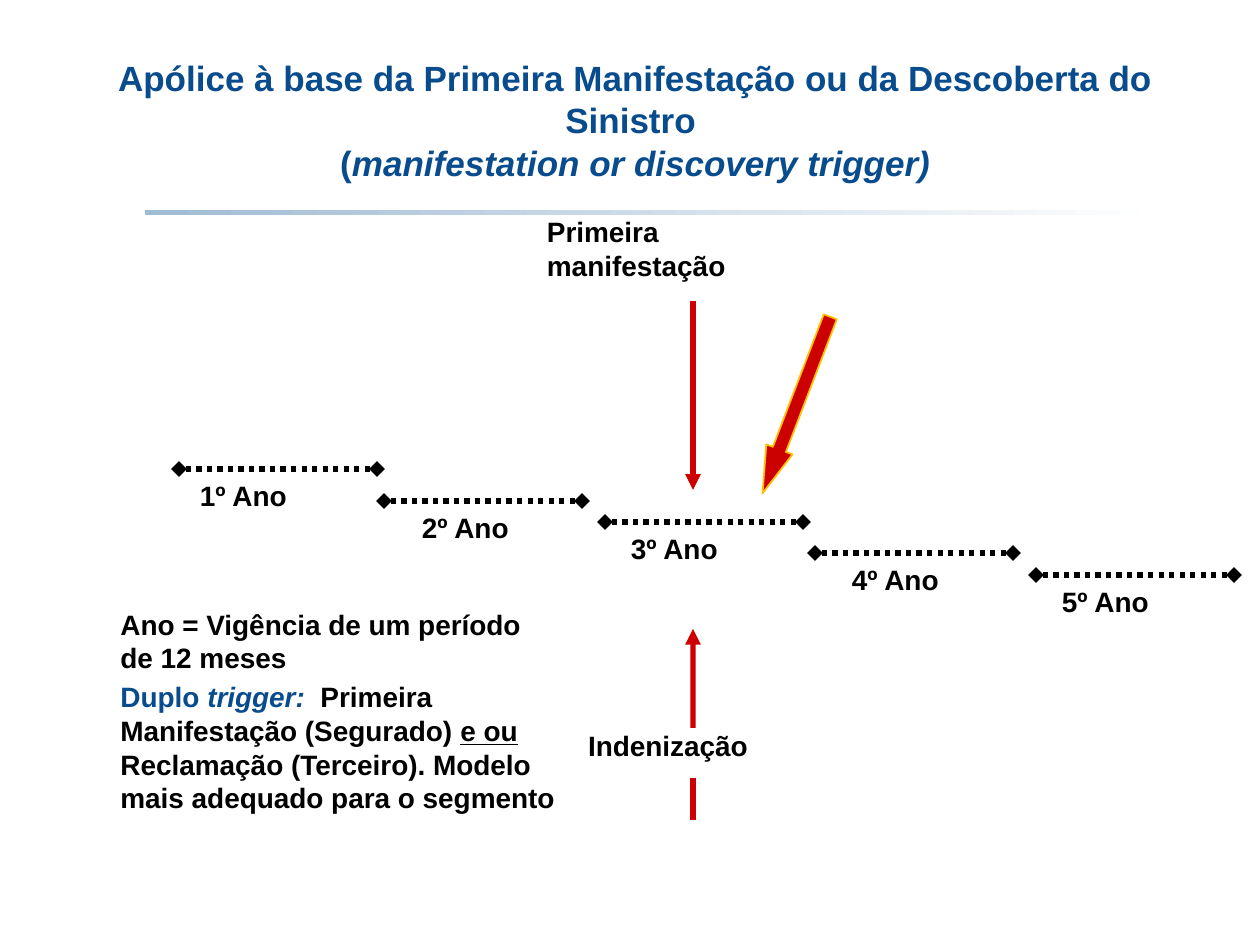
import pptx
import pptx.util
import pptx.dml.color
import pptx.enum.dml
import pptx.enum.shapes
import pptx.enum.text
import pptx.oxml
import pptx.oxml.ns
from dataclasses import dataclass

SCALE = 914400 / 126


@dataclass(frozen=True)
class Theme:
    font: str = "Arial"
    title_size: int = 20
    text_size: int = 16
    blue: str = "094C8D"
    pale_blue: str = "A0BBD4"
    white: str = "FFFFFF"
    black: str = "000000"
    red: str = "CC0000"
    gold: str = "FFC000"
    line_width: int = 3


THEME = Theme()

TITLE = "Apólice à base da Primeira Manifestação ou da Descoberta do Sinistro \v("
TITLE_ITALIC = "manifestation or discovery trigger)"

# label, line start x, line y, label x
YEARS = [
    ("1º Ano", 179, 469, 195),
    ("2º Ano", 384, 501, 417),
    ("3º Ano", 605, 522, 626),
    ("4º Ano", 815, 553, 847),
    ("5º Ano", 1036, 575, 1057),
]
YEAR_LENGTH = 198
YEAR_LABEL_SIZE = (123, 53)
EVENT_X = 693

# each span: text, colour, italic, underline
NOTES = [
    [("Ano = Vigência de um período de 12 meses", THEME.black, False, False)],
    [
        ("Duplo ", THEME.blue, False, False),
        ("trigger: ", THEME.blue, True, False),
        (" Primeira Manifestação (Segurado) ", THEME.black, False, False),
        ("e ou ", THEME.black, False, True),
        ("Reclamação (Terceiro). Modelo mais adequado para o segmento",
         THEME.black, False, False),
    ],
]


def px(*values):
    return [pptx.util.Emu(round(value * SCALE)) for value in values]


def rgb(colour):
    return pptx.dml.color.RGBColor.from_string(colour)


def style(span, size, colour, italic=False, underline=False):
    font = span.font
    font.name = THEME.font
    font.size = pptx.util.Pt(size)
    font.bold = True
    font.italic = italic
    font.underline = underline
    font.color.rgb = rgb(colour)


def space_after(para):
    para.space_after = pptx.util.Pt(THEME.text_size * 0.2)


def add_label(page, text, left, top, width, height):
    box = page.shapes.add_textbox(*px(left, top, width, height))
    frame = box.text_frame
    frame.word_wrap = False
    frame.vertical_anchor = pptx.enum.text.MSO_ANCHOR.MIDDLE
    frame.margin_left, frame.margin_top, frame.margin_right, frame.margin_bottom = px(5, 5, 5, 5)
    frame.text = text
    para = frame.paragraphs[0]
    space_after(para)
    style(para.runs[0], THEME.text_size, THEME.black)
    return box


def add_line(page, start, end, colour, head=None, tail=None, dotted=False):
    line = page.shapes.add_connector(
        pptx.enum.shapes.MSO_CONNECTOR.STRAIGHT, *px(*start, *end))
    line.line.color.rgb = rgb(colour)
    line.line.width = pptx.util.Pt(THEME.line_width)
    if dotted:
        line.line.dash_style = pptx.enum.dml.MSO_LINE.ROUND_DOT
    outline = line.line._get_or_add_ln()
    for tag, kind in (("a:headEnd", head), ("a:tailEnd", tail)):
        if kind:
            mark = pptx.oxml.parse_xml(
                f'<{tag} {pptx.oxml.ns.nsdecls("a")} type="{kind}"/>')
            outline.append(mark)
    line._element.spPr.append(
        pptx.oxml.parse_xml(f'<a:effectLst {pptx.oxml.ns.nsdecls("a")}/>'))
    return line


def add_title(page):
    title = page.shapes.title
    title.left, title.top, title.width, title.height = px(45, 43, 1181, 154)
    frame = title.text_frame
    frame.text = TITLE
    frame.word_wrap = True
    frame.auto_size = pptx.enum.text.MSO_AUTO_SIZE.NONE
    frame.vertical_anchor = pptx.enum.text.MSO_ANCHOR.MIDDLE
    para = frame.paragraphs[0]
    para.alignment = pptx.enum.text.PP_ALIGN.CENTER
    para.add_run().text = TITLE_ITALIC
    for span in para.runs:
        style(span, THEME.title_size, THEME.blue, italic=span.text == TITLE_ITALIC)


def add_rule(page):
    rule = page.shapes.add_shape(
        pptx.enum.shapes.MSO_SHAPE.RECTANGLE, *px(145, 210, 1017, 5))
    rule.shadow.inherit = False
    rule.line.fill.background()
    rule.fill.gradient()
    rule.fill.gradient_angle = 0
    for stop, colour in zip(rule.fill.gradient_stops, (THEME.pale_blue, THEME.white)):
        stop.color.rgb = rgb(colour)


def add_years(page):
    for text, start, y, label_left in YEARS:
        add_line(page, (start, y), (start + YEAR_LENGTH, y), THEME.black,
                 head="diamond", tail="diamond", dotted=True)
        add_label(page, text, label_left, y, *YEAR_LABEL_SIZE)


def add_events(page):
    add_label(page, "Primeira manifestação", 542, 212, 305, 73)
    add_line(page, (EVENT_X, 301), (EVENT_X, 490), THEME.red, tail="triangle")
    payment = add_label(page, "Indenização", 583, 728, 220, 35)
    payment_arrow = add_line(page, (EVENT_X, 728), (EVENT_X, 629), THEME.red, tail="triangle")
    payment_arrow.begin_connect(payment, 0)
    add_line(page, (EVENT_X, 778), (EVENT_X, 820), THEME.red)

    arrow = page.shapes.add_shape(
        pptx.enum.shapes.MSO_SHAPE.LEFT_ARROW, *px(702, 391, 189, 28))
    arrow.adjustments[0] = 0.5
    arrow.adjustments[1] = 1.68
    arrow.rotation = 291
    arrow.shadow.inherit = False
    arrow.fill.solid()
    arrow.fill.fore_color.rgb = rgb(THEME.red)
    arrow.line.color.rgb = rgb(THEME.gold)
    arrow.line.width = pptx.util.Pt(1)


def add_notes(page):
    box = page.shapes.add_textbox(*px(108, 601, 462, 263))
    frame = box.text_frame
    frame.word_wrap = True
    frame.auto_size = pptx.enum.text.MSO_AUTO_SIZE.SHAPE_TO_FIT_TEXT
    for index, spans in enumerate(NOTES):
        para = frame.add_paragraph() if index else frame.paragraphs[0]
        space_after(para)
        for text, colour, italic, underline in spans:
            span = para.add_run()
            span.text = text
            style(span, THEME.text_size, colour, italic, underline)


def main():
    deck = pptx.Presentation()
    deck.slide_width, deck.slide_height = px(1260, 945)
    page = deck.slides.add_slide(deck.slide_layouts[5])
    add_rule(page)
    add_title(page)
    add_years(page)
    add_events(page)
    add_notes(page)
    deck.save("out.pptx")


if __name__ == "__main__":
    main()
